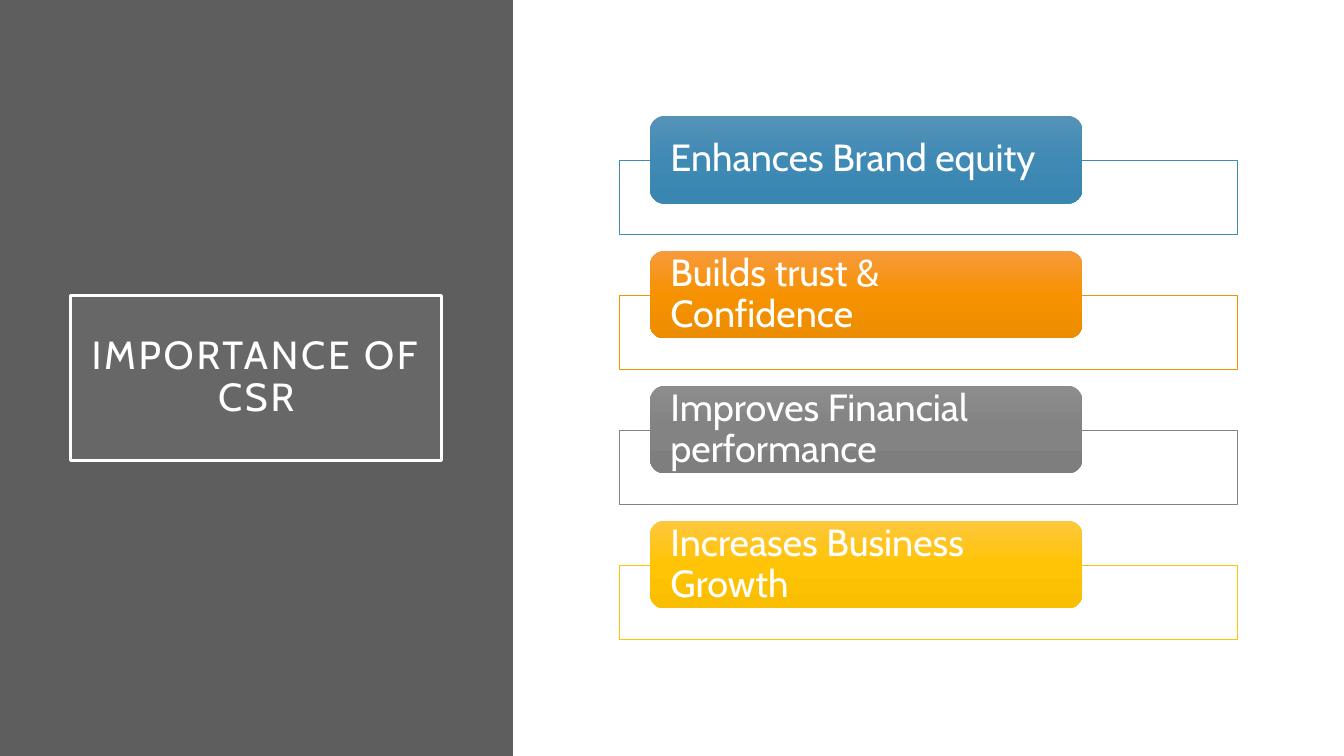
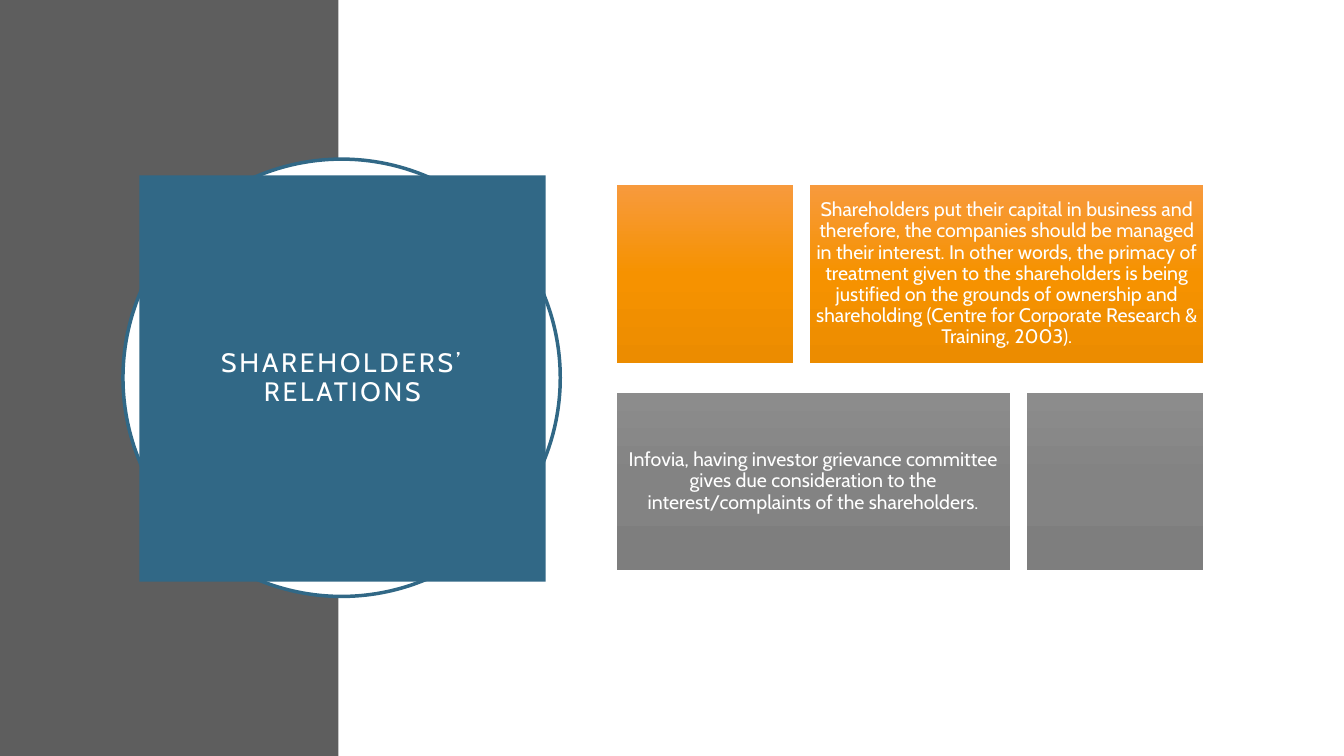
from copy import deepcopy
from dataclasses import dataclass

from lxml import etree
from pptx import Presentation
from pptx.dml.color import RGBColor
from pptx.enum import shapes, text
from pptx.oxml.ns import qn
from pptx.util import Cm, Pt


@dataclass(frozen=True)
class Theme:
    font: str = "Cabin"
    white: str = "FFFFFF"
    band: str = "5E5E5E"
    title_tint: str = "9E9E9E"
    navy: str = "316886"
    blue: tuple = ("5592B7", "3F8AB5", "3986B1")
    orange: tuple = ("F79A3D", "F69200", "EC8C00")
    grey: tuple = ("8C8C8C", "838383", "7E7E7E")
    yellow: tuple = ("FEC73E", "FFC405", "F9BE00")
    title_size: int = 28
    small_title_size: int = 19
    item_size: int = 27
    body_size: int = 14
    outline: float = 2.5
    hairline: float = 0.5


@dataclass(frozen=True)
class Box:
    """A rectangle in centimetres."""
    left: float
    top: float
    width: float
    height: float

    def emu(self) -> list:
        return [Cm(v) for v in (self.left, self.top, self.width, self.height)]


@dataclass(frozen=True)
class Benefit:
    label: str
    shades: tuple
    line: str


@dataclass(frozen=True)
class TileRow:
    text: str
    shades: tuple
    text_on_right: bool


THEME = Theme()
SHAPE = shapes.MSO_SHAPE
LEFT, CENTER = text.PP_ALIGN.LEFT, text.PP_ALIGN.CENTER
SLIDE_W, SLIDE_H = 33.87, 19.05

BENEFITS = [
    Benefit("Enhances Brand equity", THEME.blue, "418AB3"),
    Benefit("Builds trust & Confidence", THEME.orange, "F69200"),
    Benefit("Improves Financial performance", THEME.grey, "838383"),
    Benefit("Increases Business Growth", THEME.yellow, "FEC306"),
]
TILE_ROWS = [
    TileRow("Shareholders put their capital in business and therefore, the "
            "companies should be managed in their interest. In other words, "
            "the primacy of treatment given to the shareholders is being "
            "justified on the grounds of ownership and shareholding (Centre "
            "for Corporate Research & Training, 2003).", THEME.orange, True),
    TileRow("Infovia, having investor grievance committee gives due "
            "consideration to the interest/complaints of the shareholders.",
            THEME.grey, False),
]


def set_line(s, color: str | None, width: float) -> None:
    if color is None:
        s.line.fill.background()
        return
    s.line.color.rgb = RGBColor.from_string(color)
    s.line.width = Pt(width)


def set_fill(s, color: str, opacity: int = 100) -> None:
    s.fill.solid()
    s.fill.fore_color.rgb = RGBColor.from_string(color)
    if opacity < 100:
        rgb = s._element.spPr.find(qn("a:solidFill"))[0]
        etree.SubElement(rgb, qn("a:alpha"), val=str(opacity * 1000))


def set_gradient(s, shades: tuple) -> None:
    """Shade from top to bottom through three evenly spaced colours."""
    s.fill.gradient()
    s.fill.gradient_angle = 270
    stop_list = s._element.spPr.find(qn("a:gradFill")).find(qn("a:gsLst"))
    stop_list.append(deepcopy(stop_list[0]))
    for i, (stop, shade) in enumerate(zip(s.fill.gradient_stops, shades)):
        stop.position = i / 2
        stop.color.rgb = RGBColor.from_string(shade)


def add_box(slide, kind, box: Box, fill, line: str | None = None,
            width: float = THEME.hairline):
    s = slide.shapes.add_shape(kind, *box.emu())
    s.shadow.inherit = False
    if isinstance(fill, tuple):
        set_gradient(s, fill)
    else:
        set_fill(s, fill)
    set_line(s, line, width)
    return s


def write(s, words: str, size: int, align, inset_x: float, inset_y: float):
    tf = s.text_frame
    frame_format = {
        "word_wrap": True, "auto_size": text.MSO_AUTO_SIZE.NONE,
        "vertical_anchor": text.MSO_ANCHOR.MIDDLE,
        "margin_left": Cm(inset_x), "margin_right": Cm(inset_x),
        "margin_top": Cm(inset_y), "margin_bottom": Cm(inset_y),
    }
    for name, value in frame_format.items():
        setattr(tf, name, value)
    p = tf.paragraphs[0]
    p.alignment, p.line_spacing = align, 0.9
    r = p.add_run()
    r.text = words
    for name, value in {"name": THEME.font, "size": Pt(size)}.items():
        setattr(r.font, name, value)
    r.font.color.rgb = RGBColor.from_string(THEME.white)
    return r


def add_band(slide, width: float) -> None:
    add_box(slide, SHAPE.RECTANGLE, Box(0, 0, width, SLIDE_H), THEME.band)


def set_title(slide, words: str, box: Box, size: int, fill: str,
              opacity: int = 100, line: str | None = None) -> None:
    """Format the title placeholder and bring it to the front."""
    s = slide.shapes.title
    s.left, s.top, s.width, s.height = box.emu()
    set_fill(s, fill, opacity)
    set_line(s, line, THEME.outline)
    r = write(s, words, size, CENTER, 0.51, 0.51)
    r.font._element.set("spc", "200")
    slide.shapes._spTree.append(s._element)


def build_importance(slide) -> None:
    add_band(slide, 12.93)
    set_title(slide, "IMPORTANCE OF CSR", Box(1.78, 7.44, 9.35, 4.17),
              THEME.title_size, THEME.title_tint, 15, THEME.white)
    pitch = 3.4
    for i, benefit in enumerate(BENEFITS):
        top = 2.92 + i * pitch
        add_box(slide, SHAPE.RECTANGLE, Box(15.62, top + 1.12, 15.57, 1.88),
                THEME.white, benefit.line)
        chip = add_box(slide, SHAPE.ROUNDED_RECTANGLE,
                       Box(16.38, top, 10.9, 2.21), benefit.shades)
        write(chip, benefit.label, THEME.item_size, LEFT, 0.41, 0)


def build_shareholders(slide) -> None:
    add_band(slide, 8.53)
    add_box(slide, SHAPE.OVAL, Box(3.1, 4.01, 11.02, 11.02),
            THEME.white, THEME.navy, THEME.outline)
    set_title(slide, "SHAREHOLDERS’ RELATIONS", Box(3.51, 4.42, 10.24, 10.24),
              THEME.small_title_size, THEME.navy)
    left, wide, narrow, height, gap = 15.54, 9.91, 4.45, 4.47, 0.43
    for i, row in enumerate(TILE_ROWS):
        top = 4.67 + i * 5.23
        text_left = left + narrow + gap if row.text_on_right else left
        blank_left = left if row.text_on_right else left + wide + gap
        tile = add_box(slide, SHAPE.RECTANGLE,
                       Box(text_left, top, wide, height), row.shades)
        write(tile, row.text, THEME.body_size, CENTER, 0.15, 0.15)
        add_box(slide, SHAPE.RECTANGLE,
                Box(blank_left, top, narrow, height), row.shades)


def main() -> None:
    prs = Presentation()
    prs.slide_width, prs.slide_height = Cm(SLIDE_W), Cm(SLIDE_H)
    title_only = prs.slide_layouts[5]
    for build in (build_importance, build_shareholders):
        build(prs.slides.add_slide(title_only))
    prs.save("out.pptx")


if __name__ == "__main__":
    main()
